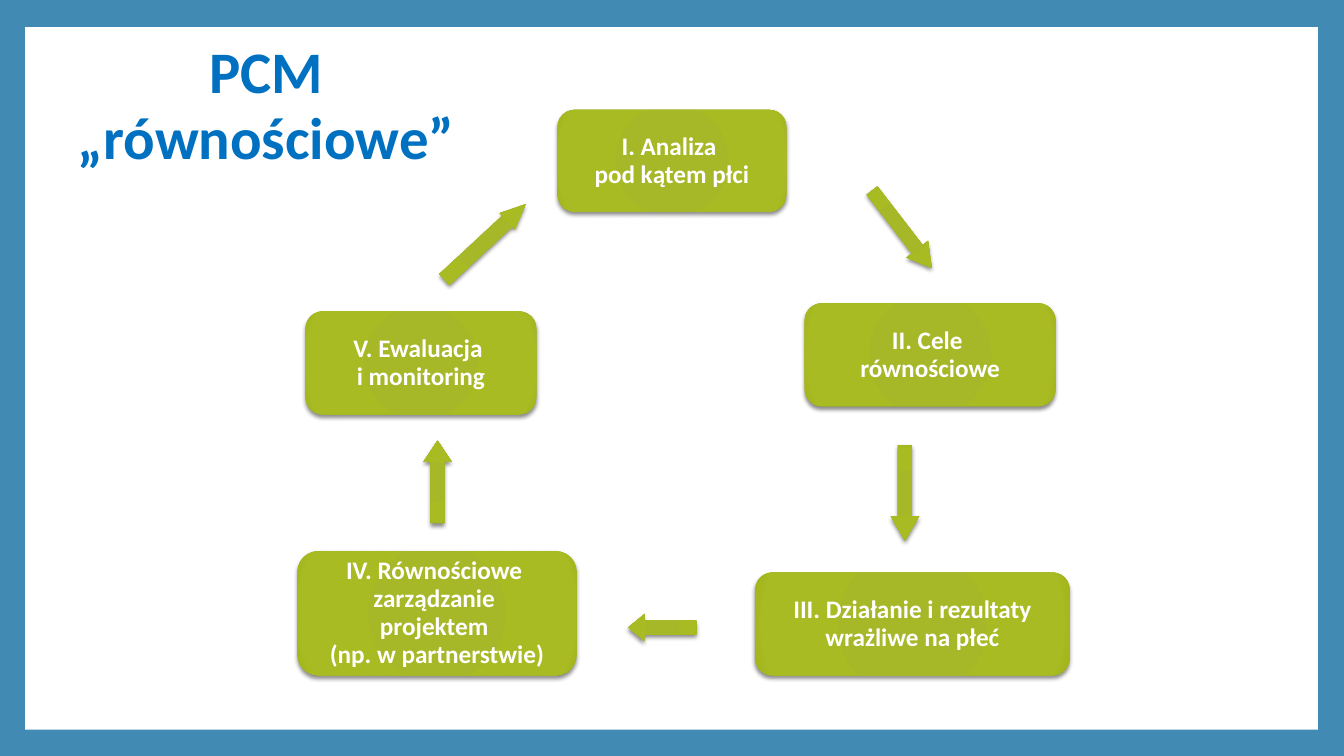
import lxml.etree
import pptx
import pptx.dml.color
import pptx.enum.shapes
import pptx.enum.text
import pptx.oxml.ns
import pptx.util

SHAPE = pptx.enum.shapes.MSO_SHAPE
ANCHOR = pptx.enum.text.MSO_ANCHOR
AUTO_SIZE = pptx.enum.text.MSO_AUTO_SIZE
CENTER = pptx.enum.text.PP_ALIGN.CENTER


def colour(code):
    return pptx.dml.color.RGBColor.from_string(code)


def add_node(parent, tag, **attributes):
    node = lxml.etree.SubElement(parent, pptx.oxml.ns.qn(tag))
    for name, value in attributes.items():
        node.set(name, str(value))
    return node


class CyclePage:
    """Style and page; lengths are columns and rows, with 75 rows to the page."""
    font = "Calibri"
    frame = "418AB3"
    paper = "FFFFFF"
    heading = "0070C0"
    greens = ((0, "A6B727"), (90000, "A9BB23"), (100000, "A1B316"))
    line_spacing = 0.93

    def __init__(self, deck):
        self.page = deck.slides.add_slide(deck.slide_layouts[6])
        self.unit = deck.slide_height / 75
        background = self.page.background.fill
        background.solid()
        background.fore_color.rgb = colour(self.frame)

    def lengths(self, area):
        return [round(value * self.unit) for value in area]

    def shape(self, kind, area):
        shape = self.page.shapes.add_shape(kind, *self.lengths(area))
        shape.shadow.inherit = False
        shape.line.fill.background()
        return shape

    def panel(self, area):
        panel = self.shape(SHAPE.RECTANGLE, area)
        panel.fill.solid()
        panel.fill.fore_color.rgb = colour(self.paper)

    def green(self, kind, area):
        shape = self.shape(kind, area)
        properties = shape._element.spPr
        # Radial gradient
        gradient = add_node(properties, "a:gradFill", rotWithShape=1)
        stops = add_node(gradient, "a:gsLst")
        for position, code in self.greens:
            add_node(add_node(stops, "a:gs", pos=position), "a:srgbClr", val=code)
        circle = add_node(gradient, "a:path", path="circle")
        add_node(circle, "a:fillToRect", l=100000, t=100000, r=100000, b=100000)
        properties.find(pptx.oxml.ns.qn("a:prstGeom")).addnext(gradient)
        # Soft shadow below
        effects = properties.find(pptx.oxml.ns.qn("a:effectLst"))
        shadow = add_node(effects, "a:outerShdw", blurRad=pptx.util.Pt(3),
                          dist=pptx.util.Pt(2), dir=5400000, rotWithShape=0)
        add_node(add_node(shadow, "a:srgbClr", val="000000"), "a:alpha", val=45000)
        return shape

    def set_text(self, frame, paragraphs, size, code):
        for index, text in enumerate(paragraphs):
            para = frame.add_paragraph() if index else frame.paragraphs[0]
            para.text = text
            para.alignment = CENTER
            para.line_spacing = self.line_spacing
            para.font.name = self.font
            para.font.size = pptx.util.Pt(size)
            para.font.bold = True
            para.font.color.rgb = colour(code)

    def title(self, text, area):
        box = self.page.shapes.add_textbox(*self.lengths(area))
        box.text_frame.word_wrap = True
        box.text_frame.auto_size = AUTO_SIZE.SHAPE_TO_FIT_TEXT
        self.set_text(box.text_frame, [text], 42, self.heading)

    def stage(self, paragraphs, area):
        box = self.green(SHAPE.ROUNDED_RECTANGLE, area)
        box.text_frame.word_wrap = False
        box.text_frame.vertical_anchor = ANCHOR.MIDDLE
        self.set_text(box.text_frame, paragraphs, 18, self.paper)

    def arrow(self, area, angle, shaft, head):
        arrow = self.green(SHAPE.RIGHT_ARROW, area)
        arrow.rotation = angle
        arrow.adjustments[0] = shaft
        arrow.adjustments[1] = head


STAGES = (
    (["I. Analiza \npod kątem płci"], (55.3, 10.9, 22.7, 10.1)),
    (["V. Ewaluacja \ni monitoring"], (30.3, 30.9, 22.9, 10.2)),
    (["IV. Równościowe ", "zarządzanie \nprojektem ", "(np. w partnerstwie)"],
     (29.5, 54.7, 27.7, 12.3)),
    (["II. Cele \nrównościowe"], (79.8, 30.1, 24.9, 10.2)),
    (["III. Działanie i rezultaty", "wrażliwe na płeć"], (74.9, 56.8, 31.2, 10.2)),
)

# Area, angle, shaft share, head share
ARROWS = (
    ((84.6, 21.4, 9.7, 2.7), 52.4, 0.5, 0.87),
    ((85, 47.5, 9.5, 2.8), 90, 0.5, 0.87),
    ((42.6, 22.9, 11, 2.2), 317.2, 0.67, 1.13),
    ((39.3, 46.4, 8.2, 2.8), 270, 0.5, 0.75),
    ((62.3, 60.9, 6.8, 2.7), 180, 0.5, 0.61),
)


def main():
    deck = pptx.Presentation()
    deck.slide_width = pptx.util.Inches(13.33)
    deck.slide_height = pptx.util.Inches(7.5)
    cycle = CyclePage(deck)

    # White page inside the blue frame
    cycle.panel((2.5, 2.7, 128.2, 69.7))
    cycle.title("PCM „równościowe”", (3.4, 3.6, 46, 14.2))

    # Project cycle
    for paragraphs, area in STAGES:
        cycle.stage(paragraphs, area)
    for area, angle, shaft, head in ARROWS:
        cycle.arrow(area, angle, shaft, head)

    deck.save("out.pptx")


if __name__ == "__main__":
    main()
